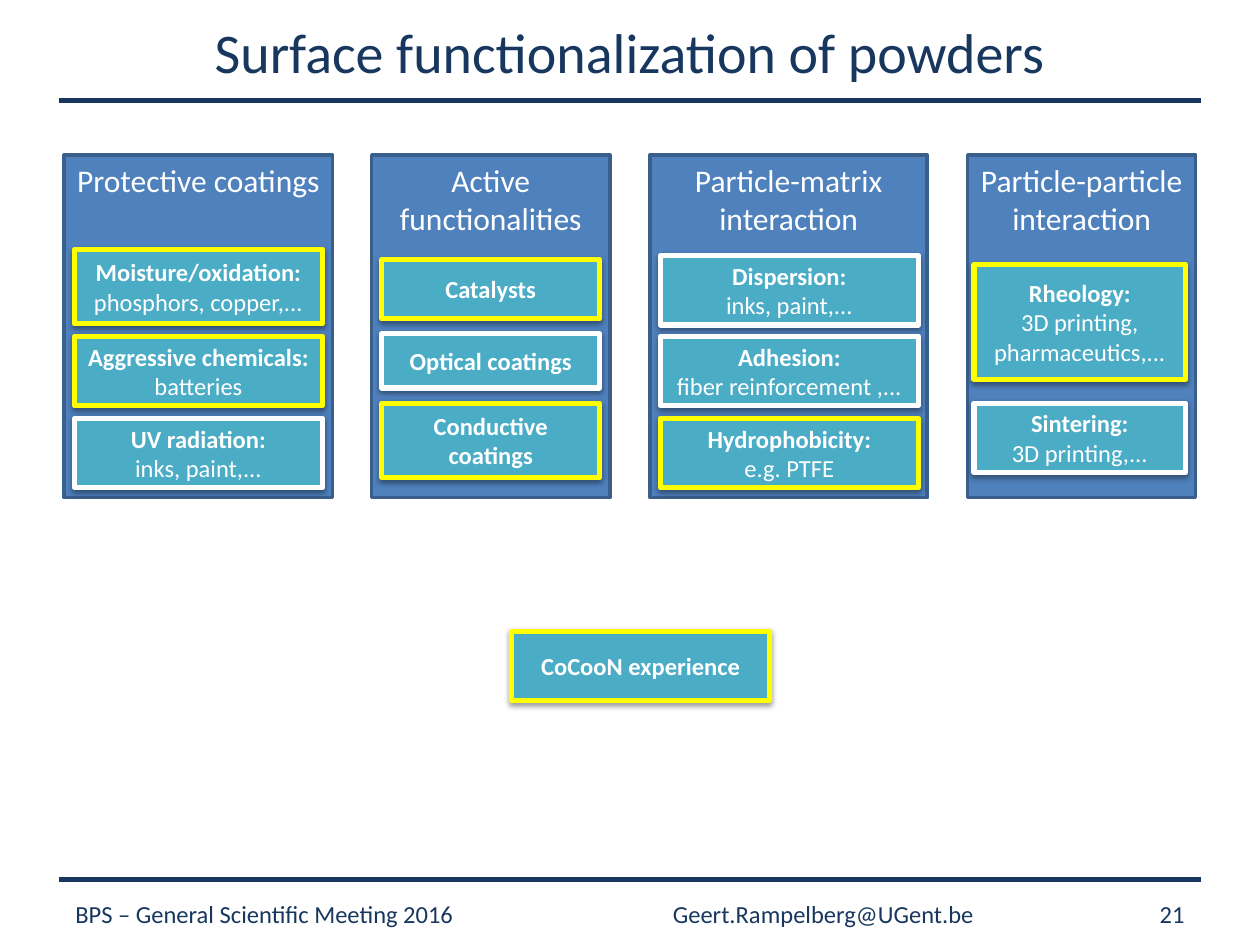
"""Build the slide on surface functionalization of powders."""
from lxml.etree import SubElement
from pptx import Presentation
from pptx.dml.color import RGBColor
from pptx.enum.shapes import MSO_CONNECTOR as Link, MSO_SHAPE as Shape
from pptx.enum.text import MSO_ANCHOR as Anchor, PP_ALIGN as Align
from pptx.oxml.ns import qn
from pptx.util import Inches, Pt

NAVY = RGBColor(0x17, 0x37, 0x5E)
BLUE = RGBColor(0x4F, 0x81, 0xBD)
EDGE = RGBColor(0x3A, 0x5F, 0x8C)
TEAL = RGBColor(0x4B, 0xAC, 0xC6)
YELLOW = RGBColor(0xFF, 0xFF, 0x00)
WHITE = RGBColor(0xFF, 0xFF, 0xFF)


def write(frame, lines, size, color, align, anchor):
    frame.word_wrap = True
    frame.vertical_anchor = anchor
    for i, (text, bold) in enumerate(lines):
        para = frame.paragraphs[0] if i == 0 else frame.add_paragraph()
        para.alignment = align
        run = para.add_run()
        run.text = text
        font = run.font
        font.name, font.size, font.bold = "Calibri", Pt(size), bold
        font.color.rgb = color


def add_box(shapes, area, fill, edge, width, lines, size, anchor, raised):
    box = shapes.add_shape(Shape.RECTANGLE, *map(Inches, area))
    box.fill.solid()
    box.fill.fore_color.rgb = fill
    box.line.color.rgb = edge
    box.line.width = Pt(width)
    box.shadow.inherit = False
    if raised:
        effects = box.element.spPr.find(qn("a:effectLst"))
        shade = SubElement(effects, qn("a:outerShdw"), blurRad="40000",
                           dist="20000", dir="5400000", rotWithShape="0")
        black = SubElement(shade, qn("a:srgbClr"), val="000000")
        SubElement(black, qn("a:alpha"), val="38000")
    write(box.text_frame, lines, size, WHITE, Align.CENTER, anchor)


deck = Presentation()
deck.slide_width, deck.slide_height = Inches(10), Inches(7.5)
slide = deck.slides.add_slide(deck.slide_layouts[5])

for y in (0.8, 6.98):
    rule = slide.shapes.add_connector(
        Link.STRAIGHT, Inches(0.47), Inches(y), Inches(9.53), Inches(y))
    rule.line.color.rgb = NAVY
    rule.line.width = Pt(3)
    SubElement(rule.element.spPr, qn("a:effectLst"))

title = slide.shapes.title
title.left, title.top = Inches(0.5), Inches(0.09)
title.width, title.height = Inches(9), Inches(0.63)
write(title.text_frame, [("Surface functionalization of powders", False)],
      32, NAVY, Align.CENTER, Anchor.MIDDLE)

columns = [
    ("Protective coatings", 0.51, 2.13, 0.59, 1.97, [
        (1.98, 0.59, YELLOW, "Moisture/oxidation:", "phosphors, copper,..."),
        (2.67, 0.55, YELLOW, "Aggressive chemicals:", "batteries"),
        (3.32, 0.55, WHITE, "UV radiation:", "inks, paint,...")]),
    ("Active functionalities", 2.95, 1.89, 3.03, 1.73, [
        (2.06, 0.47, YELLOW, "Catalysts", ""),
        (2.65, 0.43, WHITE, "Optical coatings", ""),
        (3.2, 0.59, YELLOW, "Conductive coatings", "")]),
    ("Particle-matrix interaction", 5.16, 2.2, 5.24, 2.05, [
        (2.03, 0.55, WHITE, "Dispersion:", "inks, paint,..."),
        (2.67, 0.55, WHITE, "Adhesion:", "fiber reinforcement ,..."),
        (3.32, 0.55, YELLOW, "Hydrophobicity:", "e.g. PTFE")]),
    ("Particle-particle interaction", 7.68, 1.81, 7.73, 1.68, [
        (2.1, 0.91, YELLOW, "Rheology:", "3D printing, pharmaceutics,..."),
        (3.2, 0.55, WHITE, "Sintering:", "3D printing,...")]),
]
for head, left, width, inner, span, cards in columns:
    group = slide.shapes.add_group_shape().shapes
    add_box(group, (left, 1.23, width, 2.72), BLUE, EDGE, 2,
            [(head, False)], 18, Anchor.TOP, False)
    for top, height, edge, name, uses in cards:
        lines = [(name, True)] + ([(uses, False)] if uses else [])
        add_box(group, (inner, top, span, height), TEAL, edge, 3,
                lines, 14, Anchor.MIDDLE, True)

add_box(slide.shapes, (4.06, 5.01, 2.05, 0.55), TEAL, YELLOW, 3,
        [("CoCooN experience", True)], 14, Anchor.MIDDLE, True)

footer = [
    ("BPS – General Scientific Meeting 2016", 0.5, 3.94, Align.LEFT),
    ("Geert.Rampelberg@UGent.be", 4.96, 3.15, Align.CENTER),
    ("21", 8.58, 0.92, Align.RIGHT),
]
for text, left, width, align in footer:
    note = slide.shapes.add_textbox(
        Inches(left), Inches(7.06), Inches(width), Inches(0.39))
    write(note.text_frame, [(text, False)], 14, NAVY, align, Anchor.MIDDLE)

deck.save("out.pptx")
